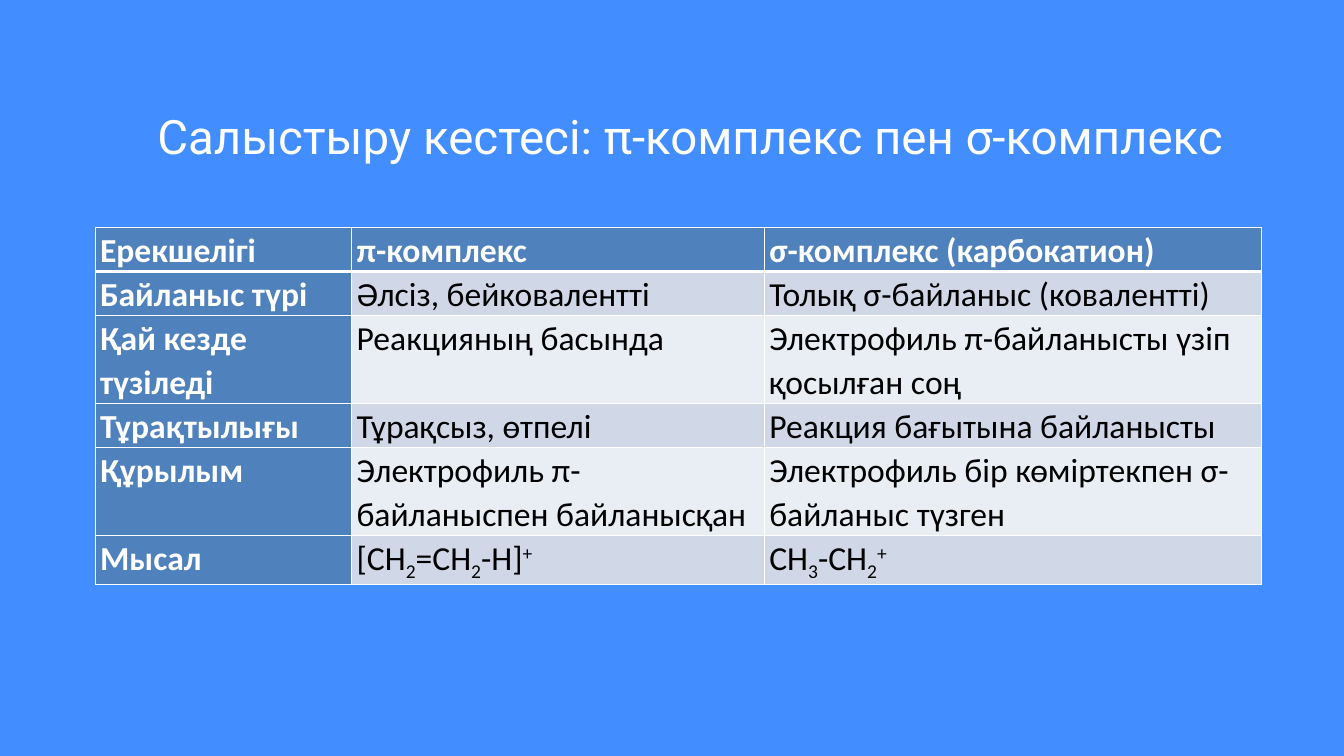
from dataclasses import dataclass

from lxml.etree import SubElement
from pptx import Presentation
from pptx.dml.color import RGBColor
from pptx.enum.text import MSO_ANCHOR, PP_ALIGN
from pptx.oxml.ns import qn
from pptx.util import Cm, Pt


@dataclass(frozen=True)
class Theme:
    background: str = "428DFF"
    light: str = "FFFFFF"
    dark: str = "000000"
    heading_fill: str = "4F81BD"
    bands: tuple = ("D0D8E8", "E9EDF4")
    title_font: str = "Roboto"
    table_font: str = "Calibri"
    title_size: float = 50.8
    table_size: float = 36
    thin: float = 1
    thick: float = 3


THEME = Theme()
SUB, SUPER = -25000, 30000

TITLE = "Салыстыру кестесі: π-комплекс пен σ-комплекс"
COMPARISON = [
    ("Ерекшелігі", "π-комплекс", "σ-комплекс (карбокатион)"),
    ("Байланыс түрі", "Әлсіз, бейковалентті", "Толық σ-байланыс (ковалентті)"),
    ("Қай кезде түзіледі", "Реакцияның басында", "Электрофиль π-байланысты үзіп қосылған соң"),
    ("Тұрақтылығы", "Тұрақсыз, өтпелі", "Реакция бағытына байланысты"),
    ("Құрылым", "Электрофиль π-байланыспен байланысқан", "Электрофиль бір көміртекпен σ-байланыс түзген"),
    (
        "Мысал",
        [("[СH", 0), ("2", SUB), ("=CH", 0), ("2", SUB), ("-H]", 0), ("+", SUPER)],
        [("CH", 0), ("3", SUB), ("-CH", 0), ("2", SUB), ("+", SUPER)],
    ),
]
COLUMN_WIDTHS = [9.7, 15.6, 18.77]
LINES_PER_ROW = [1, 1, 2, 1, 2, 1]
LINE_HEIGHT = 1.63


def write(frame, text, *, font, size, color, bold=False, spacing=1.0):
    frame.word_wrap = True
    paragraph = frame.paragraphs[0]
    paragraph.alignment = PP_ALIGN.LEFT
    paragraph.line_spacing = spacing
    paragraph.space_before = paragraph.space_after = Pt(0)
    for part, baseline in [(text, 0)] if isinstance(text, str) else text:
        run = paragraph.add_run()
        run.text = part
        run.font.name = font
        run.font.size = Pt(size)
        run.font.bold = bold
        run.font.color.rgb = RGBColor.from_string(color)
        if baseline:
            run.font._element.set("baseline", str(baseline))


def set_margins(target, side):
    target.margin_left = target.margin_right = Cm(side)
    target.margin_top = target.margin_bottom = Cm(0)


def add_borders(cell, top, bottom):
    properties = cell._tc.get_or_add_tcPr()
    for edge, width in (("L", THEME.thin), ("R", THEME.thin), ("T", top), ("B", bottom)):
        border = SubElement(properties, qn(f"a:ln{edge}"), w=str(Pt(width)))
        fill = SubElement(border, qn("a:solidFill"))
        SubElement(fill, qn("a:srgbClr"), val=THEME.light)


def add_title(slide):
    title = slide.shapes.title
    title.left, title.top, title.width, title.height = Cm(5.95), Cm(3.7), Cm(44), Cm(4.9)
    frame = title.text_frame
    set_margins(frame, 0)
    frame.vertical_anchor = MSO_ANCHOR.TOP
    write(frame, TITLE, font=THEME.title_font, size=THEME.title_size,
          color=THEME.light, spacing=Pt(71))


def add_comparison(slide):
    table = slide.shapes.add_table(
        len(COMPARISON), len(COLUMN_WIDTHS), Cm(3.6), Cm(8.6),
        Cm(sum(COLUMN_WIDTHS)), Cm(LINE_HEIGHT * sum(LINES_PER_ROW)),
    ).table
    for column, width in zip(table.columns, COLUMN_WIDTHS):
        column.width = Cm(width)
    for row, lines in zip(table.rows, LINES_PER_ROW):
        row.height = Cm(LINE_HEIGHT * lines)

    for row_index, entries in enumerate(COMPARISON):
        for column_index, entry in enumerate(entries):
            heading = row_index == 0 or column_index == 0
            cell = table.cell(row_index, column_index)
            set_margins(cell, 0.18)
            cell.vertical_anchor = MSO_ANCHOR.TOP
            add_borders(cell,
                        top=THEME.thick if row_index == 1 else THEME.thin,
                        bottom=THEME.thick if row_index == 0 else THEME.thin)
            band = THEME.bands[(row_index - 1) % 2]
            cell.fill.solid()
            cell.fill.fore_color.rgb = RGBColor.from_string(
                THEME.heading_fill if heading else band)
            write(cell.text_frame, entry, font=THEME.table_font, size=THEME.table_size,
                  color=THEME.light if heading else THEME.dark, bold=heading, spacing=1.07)


def main():
    presentation = Presentation()
    presentation.slide_width, presentation.slide_height = Cm(50.8), Cm(28.58)
    slide = presentation.slides.add_slide(presentation.slide_layouts[5])
    slide.background.fill.solid()
    slide.background.fill.fore_color.rgb = RGBColor.from_string(THEME.background)
    add_title(slide)
    add_comparison(slide)
    presentation.save("out.pptx")


if __name__ == "__main__":
    main()
